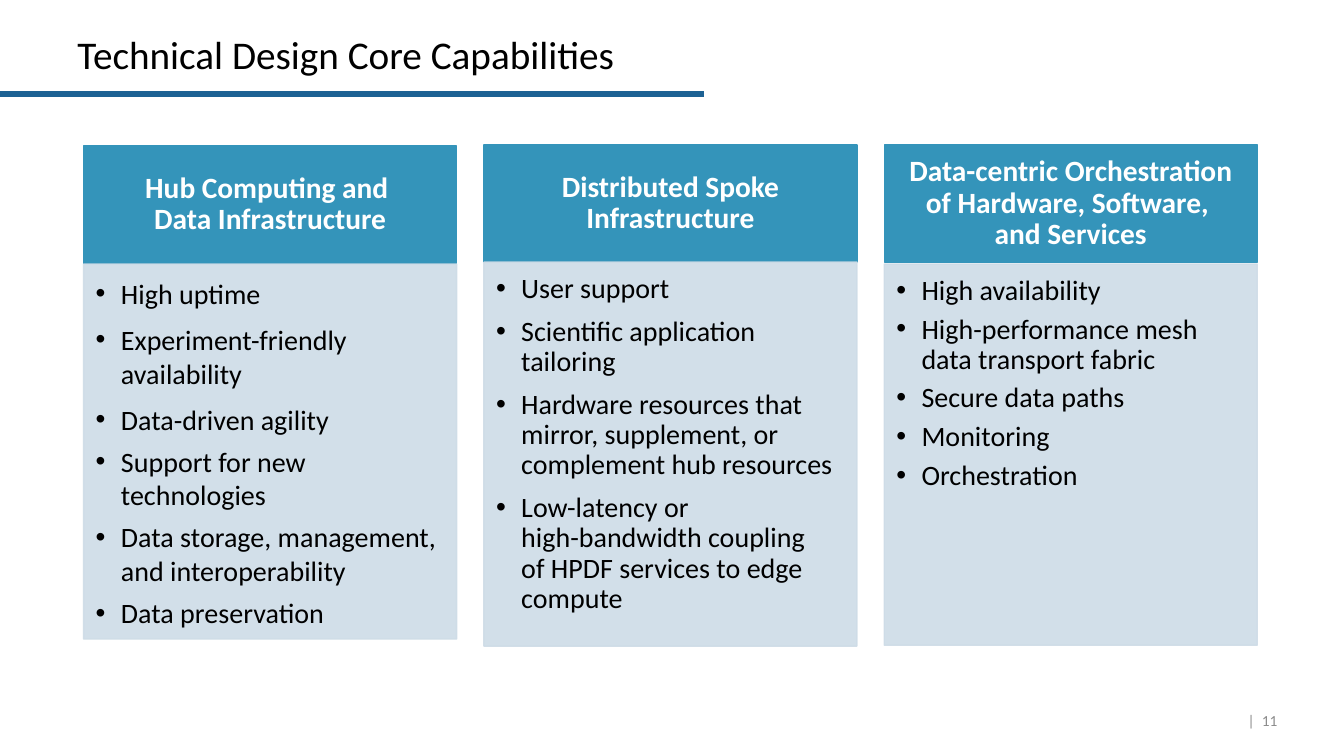
from lxml import etree
from pptx import Presentation
from pptx import util as u
from pptx.dml.color import RGBColor
from pptx.enum import shapes, text
from pptx.oxml import ns

TITLE = "Technical Design Core Capabilities"
PAGE = "|  11"
COLUMNS = [
    {
        "heading": "Hub Computing and \nData Infrastructure",
        "rows": (1.45, 2.62, 6.34),
        "line_spacing": 1.0,
        "space_after": (3, 3, 0, 0, 0, 0),
        "bullets": [
            "High uptime",
            "Experiment-friendly availability",
            "Data-driven agility",
            "Support for new technologies",
            "Data storage, management, and interoperability",
            "Data preservation",
        ],
    },
    {
        "heading": "Distributed Spoke Infrastructure",
        "rows": (1.44, 2.6, 6.41),
        "line_spacing": 0.9,
        "space_after": (3, 3, 3, 3),
        "bullets": [
            "User support",
            "Scientific application tailoring",
            "Hardware resources that mirror, supplement, or complement hub resources",
            "Low-latency or \nhigh-bandwidth coupling \nof HPDF services to edge compute",
        ],
    },
    {
        "heading": "Data-centric Orchestration of Hardware, Software, \nand Services",
        "rows": (1.44, 2.62, 6.4),
        "line_spacing": 0.9,
        "space_after": (0, 0, 0, 0, 0),
        "bullets": [
            "High availability",
            "High-performance mesh data transport fabric",
            "Secure data paths",
            "Monitoring",
            "Orchestration",
        ],
    },
]
COLORS = {
    "rule": "1D6294",
    "heading": "3494BA",
    "body": "CEDCE7",
    "white": "FFFFFF",
    "black": "000000",
    "page": "8C8C8C",
}
FONT = "Calibri"
LEFT, PITCH, WIDTH, HEADING_HEIGHT = 0.83, 3.97, 3.7, 1.16
INDENT = 0.25


def color(name):
    return RGBColor.from_string(COLORS[name])


def set_frame(shape, insets, anchor):
    frame = shape.text_frame
    frame.word_wrap = True
    frame.vertical_anchor = anchor
    frame.margin_left, frame.margin_top, frame.margin_right, frame.margin_bottom = map(u.Inches, insets)
    return frame


def write(paragraph, words, size, color_name, align, bold=False, line_spacing=1.0):
    paragraph.text = words
    paragraph.alignment = align
    paragraph.line_spacing = line_spacing
    for run in paragraph.runs:
        run.font.name = FONT
        run.font.size = u.Pt(size)
        run.font.bold = bold
        run.font.color.rgb = color(color_name)


def add_label(slide, box, words, size, color_name, align, anchor, insets, line_spacing=1.0):
    label = slide.shapes.add_textbox(*map(u.Inches, box))
    frame = set_frame(label, insets, anchor)
    write(frame.paragraphs[0], words, size, color_name, align, line_spacing=line_spacing)


def add_panel(slide, box, color_name):
    panel = slide.shapes.add_shape(shapes.MSO_SHAPE.RECTANGLE, *map(u.Inches, box))
    panel.shadow.inherit = False
    panel.fill.solid()
    panel.fill.fore_color.rgb = color(color_name)
    panel.line.color.rgb = color(color_name)
    panel.line.width = u.Pt(1)
    return panel


def make_translucent(panel, percent):
    for tint in panel.element.spPr.iter(ns.qn("a:srgbClr")):
        etree.SubElement(tint, ns.qn("a:alpha"), val=str(percent * 1000))


def add_bullet(paragraph):
    properties = paragraph._p.get_or_add_pPr()
    properties.set("marL", str(u.Inches(INDENT)))
    properties.set("indent", str(-u.Inches(INDENT)))
    etree.SubElement(properties, ns.qn("a:buFont"), typeface="Arial")
    etree.SubElement(properties, ns.qn("a:buChar"), char="•")


def add_column(slide, left, column):
    top, middle, bottom = column["rows"]
    heading = add_panel(slide, (left, top, WIDTH, HEADING_HEIGHT), "heading")
    frame = set_frame(heading, (0.16, 0.09, 0.16, 0.09), text.MSO_ANCHOR.MIDDLE)
    write(frame.paragraphs[0], column["heading"], 21, "white", text.PP_ALIGN.CENTER, True, 0.9)

    body = add_panel(slide, (left, middle, WIDTH, bottom - middle), "body")
    make_translucent(body, 90)
    frame = set_frame(body, (0.12, 0.12, 0.16, 0.18), text.MSO_ANCHOR.TOP)
    for index, (words, after) in enumerate(zip(column["bullets"], column["space_after"])):
        paragraph = frame.add_paragraph() if index else frame.paragraphs[0]
        add_bullet(paragraph)
        write(paragraph, words, 20, "black", text.PP_ALIGN.LEFT, line_spacing=column["line_spacing"])
        paragraph.space_before = u.Pt(6 if index else 0)
        paragraph.space_after = u.Pt(after)


def add_rule(slide):
    rule = slide.shapes.add_connector(
        shapes.MSO_CONNECTOR.STRAIGHT, 0, u.Inches(0.93), u.Inches(6.98), u.Inches(0.93)
    )
    rule.line.color.rgb = color("rule")
    rule.line.width = u.Pt(4.5)
    etree.SubElement(rule.element.spPr, ns.qn("a:effectLst"))


def main():
    presentation = Presentation()
    presentation.slide_width = u.Inches(13.33)
    presentation.slide_height = u.Inches(7.5)
    slide = presentation.slides.add_slide(presentation.slide_layouts[6])

    add_rule(slide)
    add_label(slide, (0.67, 0.28, 11, 0.54), TITLE, 28, "black", text.PP_ALIGN.LEFT,
              text.MSO_ANCHOR.BOTTOM, (0.1, 0.05, 0.1, 0.05), 0.9)
    add_label(slide, (12.25, 6.95, 0.42, 0.4), PAGE, 11, "page", text.PP_ALIGN.RIGHT,
              text.MSO_ANCHOR.MIDDLE, (0, 0.05, 0, 0.05))
    for index, column in enumerate(COLUMNS):
        add_column(slide, LEFT + index * PITCH, column)

    presentation.save("out.pptx")


if __name__ == "__main__":
    main()
